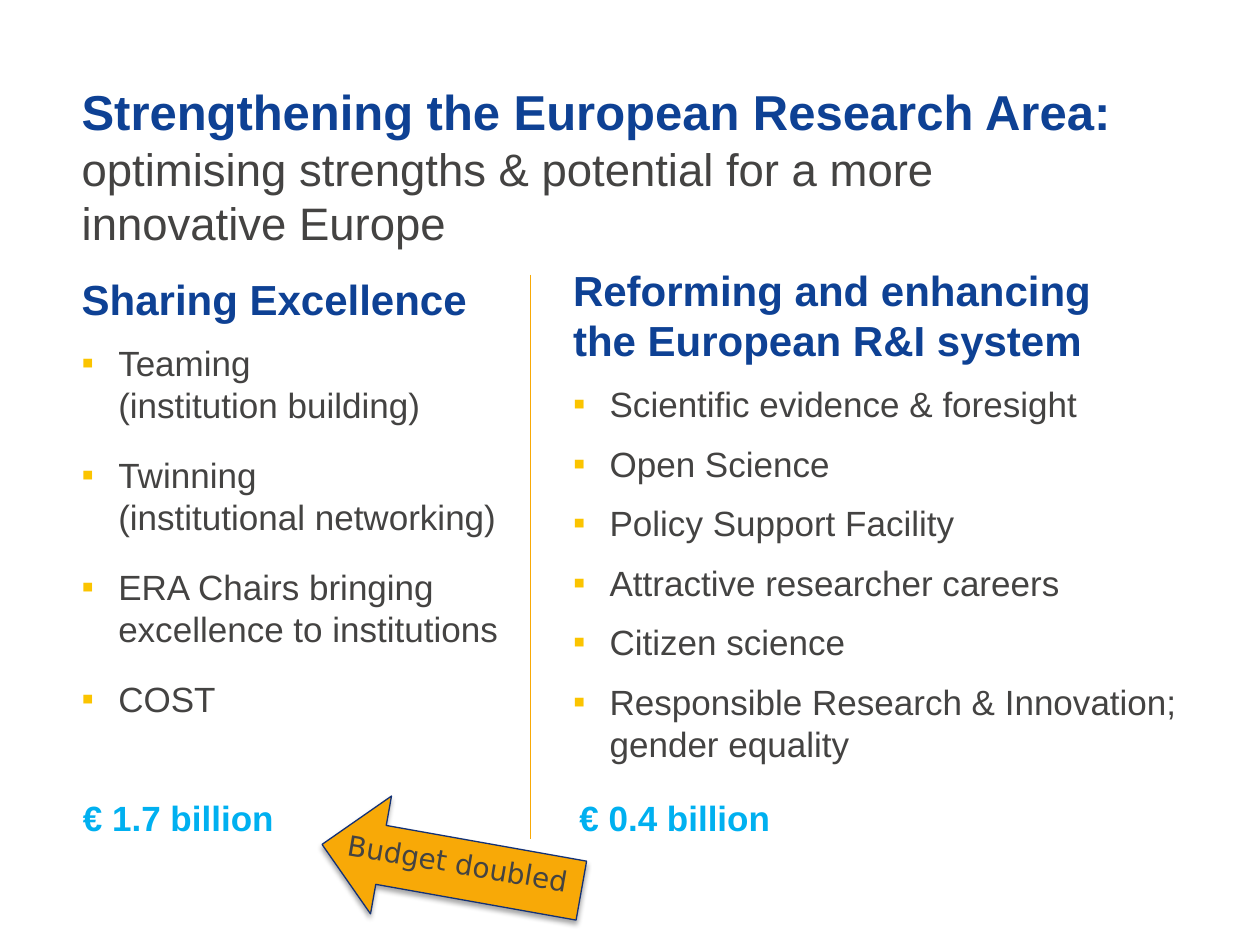
from lxml import etree
from pptx import Presentation
from pptx.dml.color import RGBColor
from pptx.enum.shapes import MSO_CONNECTOR, MSO_SHAPE
from pptx.enum.text import MSO_ANCHOR, MSO_AUTO_SIZE
from pptx.oxml import parse_xml
from pptx.oxml.ns import nsdecls, qn
from pptx.util import Inches, Pt

STRAIGHT = MSO_CONNECTOR.STRAIGHT
DOWN_ARROW = MSO_SHAPE.DOWN_ARROW
TOP = MSO_ANCHOR.TOP
GROW = MSO_AUTO_SIZE.SHAPE_TO_FIT_TEXT
NO_FIT = MSO_AUTO_SIZE.NONE

COLUMNS, ROWS = 100, 75
WIDTH, HEIGHT = Inches(10), Inches(7.5)
INDENT = Inches(0.29)
COLORS = {
    "navy": "0E4194",
    "body": "444342",
    "bullet": "FBC400",
    "budget": "00B0F0",
    "orange": "F8A907",
    "outline": "133176",
    "shadow": "000000",
}
TITLE = (
    "Strengthening the European Research Area: \v"
    "optimising strengths & potential for a more \vinnovative Europe"
)
EXCELLENCE = [
    "Teaming \v(institution building)",
    "Twinning \v(institutional networking)",
    "ERA Chairs bringing excellence to institutions",
    "COST",
]
REFORMS = [
    "Scientific evidence & foresight",
    "Open Science",
    "Policy Support Facility",
    "Attractive researcher careers",
    "Citizen science",
    "Responsible Research & Innovation; gender equality",
]


def color(name):
    """Return the named colour."""
    return RGBColor.from_string(COLORS[name])


def grid(left, top, width, height):
    """Turn columns and rows into slide lengths."""
    return (
        int(left * WIDTH / COLUMNS),
        int(top * HEIGHT / ROWS),
        int(width * WIDTH / COLUMNS),
        int(height * HEIGHT / ROWS),
    )


def style_run(run, size, color_name, bold=False, face="Arial"):
    """Format one run."""
    run.font.size = Pt(size)
    run.font.name = face
    run.font.bold = bold
    run.font.color.rgb = color(color_name)


def write(paragraph, text, *style):
    """Fill a paragraph and format its runs alike."""
    paragraph.text = text
    for run in paragraph.runs:
        style_run(run, *style)


def add_text_frame(slide, area, fit=GROW, rotation=0):
    """Add a wrapping text box and return its frame."""
    box = slide.shapes.add_textbox(*grid(*area))
    box.rotation = rotation
    frame = box.text_frame
    frame.word_wrap = True
    frame.auto_size = fit
    frame.vertical_anchor = TOP
    return frame


def add_title(slide):
    """Add the bold title line and its lighter continuation."""
    frame = add_text_frame(slide, (5.5, 6, 91.7, 7.9), NO_FIT)
    write(frame.paragraphs[0], TITLE, 26, "body")
    style_run(frame.paragraphs[0].runs[0], 28, "navy", True)


def add_bullet(paragraph):
    """Give a paragraph a hanging square bullet."""
    properties = paragraph._p.get_or_add_pPr()
    properties.set("marL", str(INDENT))
    properties.set("indent", str(-INDENT))
    bullet_color = etree.SubElement(properties, qn("a:buClr"))
    etree.SubElement(bullet_color, qn("a:srgbClr"), val=COLORS["bullet"])
    etree.SubElement(properties, qn("a:buFont"), typeface="Arial")
    etree.SubElement(properties, qn("a:buChar"), char="▪")


def add_topic(slide, area, heading, items, gap):
    """Add a heading with its bulleted items."""
    frame = add_text_frame(slide, area)
    write(frame.paragraphs[0], heading, 24, "navy", True)
    frame.paragraphs[0].space_after = Pt(6)
    for item in items:
        paragraph = frame.add_paragraph()
        add_bullet(paragraph)
        paragraph.space_before = Pt(4)
        paragraph.space_after = Pt(gap)
        write(paragraph, item, 20, "body")


def add_budget(slide, left, amount):
    """Add the budget of one topic."""
    frame = add_text_frame(slide, (left, 62.7, 29.1, 8.4))
    write(frame.paragraphs[0], amount, 20, "budget", True)


def add_divider(slide):
    """Add the vertical rule between the topics."""
    left, top, _, length = grid(42.1, 21.8, 0, 44.8)
    divider = slide.shapes.add_connector(STRAIGHT, left, top, left, top + length)
    divider.line.color.rgb = color("orange")
    divider.line.width = Pt(1)
    etree.SubElement(divider._element.spPr, qn("a:effectLst"))


def add_arrow(slide):
    """Add the shadowed arrow and its slanted label."""
    arrow = slide.shapes.add_shape(DOWN_ARROW, *grid(31.1, 58.4, 9.5, 20.9))
    arrow.rotation = 100.1
    arrow.fill.solid()
    arrow.fill.fore_color.rgb = color("orange")
    arrow.line.color.rgb = color("outline")
    arrow.line.width = Pt(0.75)
    arrow.shadow.inherit = False
    effects = arrow._element.spPr.find(qn("a:effectLst"))
    effects.append(parse_xml(
        f'<a:outerShdw {nsdecls("a")} blurRad="{Pt(3.1)}" dist="{Pt(1.8)}" '
        f'dir="5400000" rotWithShape="0"><a:srgbClr val="{COLORS["shadow"]}">'
        '<a:alpha val="35000"/></a:srgbClr></a:outerShdw>'
    ))
    label = add_text_frame(slide, (26.5, 66.8, 21.4, 3.7), rotation=9.7)
    write(label.paragraphs[0], "Budget doubled", 16, "body", False, "DejaVu Sans")


def main():
    """Build and save the slide."""
    deck = Presentation()
    deck.slide_width, deck.slide_height = WIDTH, HEIGHT
    slide = deck.slides.add_slide(deck.slide_layouts[6])
    add_title(slide)
    add_topic(slide, (5.5, 21.2, 36.2, 37.2), "Sharing Excellence", EXCELLENCE, 12)
    add_topic(
        slide,
        (44.5, 20.5, 51.6, 41.7),
        "Reforming and enhancing \vthe European R&I system",
        REFORMS,
        6,
    )
    add_budget(slide, 45, "€ 0.4 billion")
    add_budget(slide, 5.6, "€ 1.7 billion")
    add_divider(slide)
    add_arrow(slide)
    deck.save("out.pptx")


if __name__ == "__main__":
    main()
